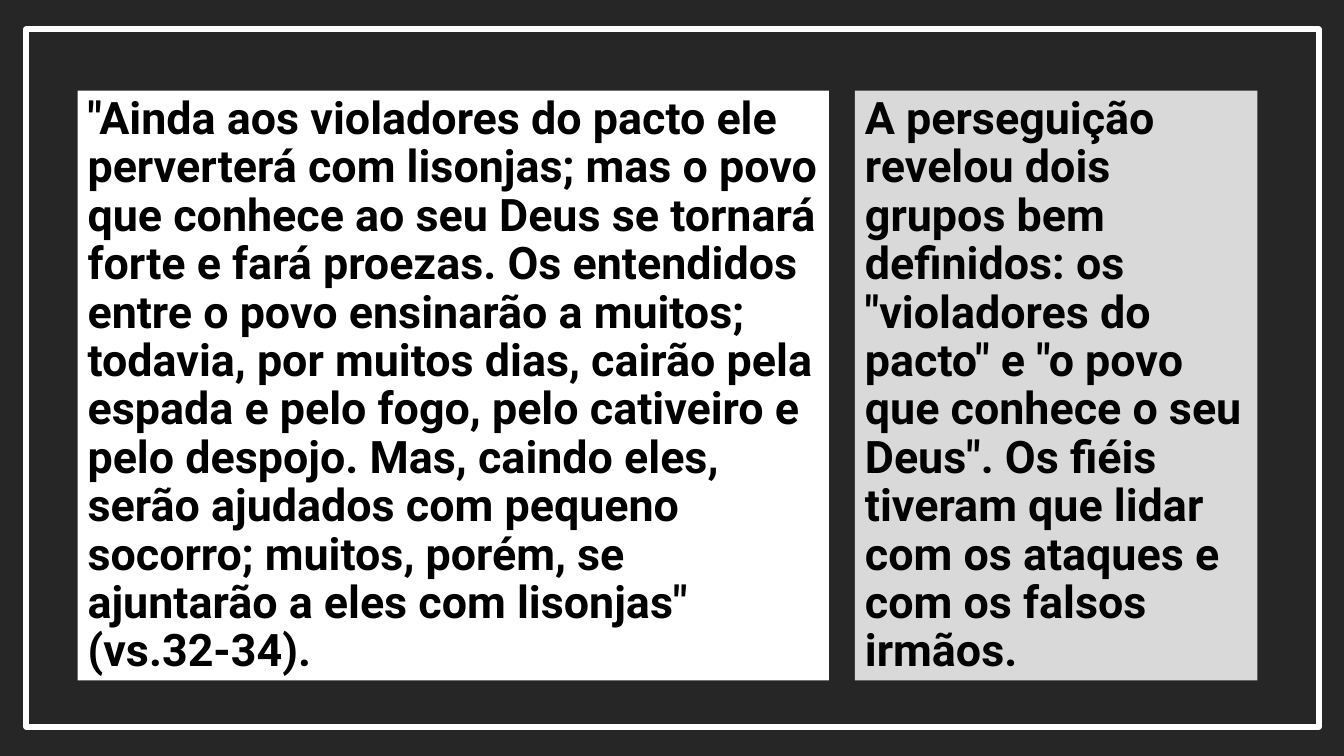
from pptx import Presentation
from pptx.dml.color import RGBColor
from pptx.enum.shapes import MSO_SHAPE
from pptx.enum.text import MSO_ANCHOR, PP_ALIGN
from pptx.util import Inches, Pt

RECTANGLE = MSO_SHAPE.RECTANGLE
TOP = MSO_ANCHOR.TOP
LEFT = PP_ALIGN.LEFT

VERSE = (
    '"Ainda aos violadores do pacto ele perverterá com lisonjas; mas o povo '
    'que conhece ao seu Deus se tornará forte e fará proezas. Os entendidos '
    'entre o povo ensinarão a muitos; todavia, por muitos dias, cairão pela '
    'espada e pelo fogo, pelo cativeiro e pelo despojo. Mas, caindo eles, '
    'serão ajudados com pequeno socorro; muitos, porém, se ajuntarão a eles '
    'com lisonjas" (vs.32-34).'
)
COMMENTARY = (
    'A perseguição revelou dois grupos bem definidos: os "violadores do '
    'pacto" e "o povo que conhece o seu Deus". Os fiéis tiveram que lidar '
    'com os ataques e com os falsos irmãos.'
)


def color(hex_string):
    return RGBColor.from_string(hex_string)


def add_rectangle(left, top, width, height, fill=None):
    """Add a rectangle without shadow or outline; no fill leaves it hollow."""
    box = slide.shapes.add_shape(
        RECTANGLE, Inches(left), Inches(top), Inches(width), Inches(height))
    box.shadow.inherit = False
    box.line.fill.background()
    if fill:
        box.fill.solid()
        box.fill.fore_color.rgb = color(fill)
    else:
        box.fill.background()
    return box


deck = Presentation()
deck.slide_width = Inches(13.33)
deck.slide_height = Inches(7.5)
slide = deck.slides.add_slide(deck.slide_layouts[6])

# Dark backdrop and white frame
add_rectangle(0, 0, 13.33, 7.5, "262626")
frame = add_rectangle(0.26, 0.29, 12.82, 6.92)
frame.line.color.rgb = color("FFFFFF")
frame.line.width = Pt(4)

# Verse on the left, commentary on the right
panels = [
    (0.77, 7.45, "FFFFFF", VERSE),
    (8.48, 3.99, "D9D9D9", COMMENTARY),
]
for left, width, fill, text in panels:
    panel = add_rectangle(left, 0.9, width, 5.85, fill)
    panel.text_frame.word_wrap = True
    panel.text_frame.vertical_anchor = TOP
    para = panel.text_frame.paragraphs[0]
    para.alignment = LEFT
    para.line_spacing = 0.9
    para.space_before = Pt(10)
    span = para.add_run()
    span.text = text
    span.font.name = "Roboto"
    span.font.size = Pt(32)
    span.font.bold = True
    span.font.color.rgb = color("000000")

deck.save("out.pptx")
